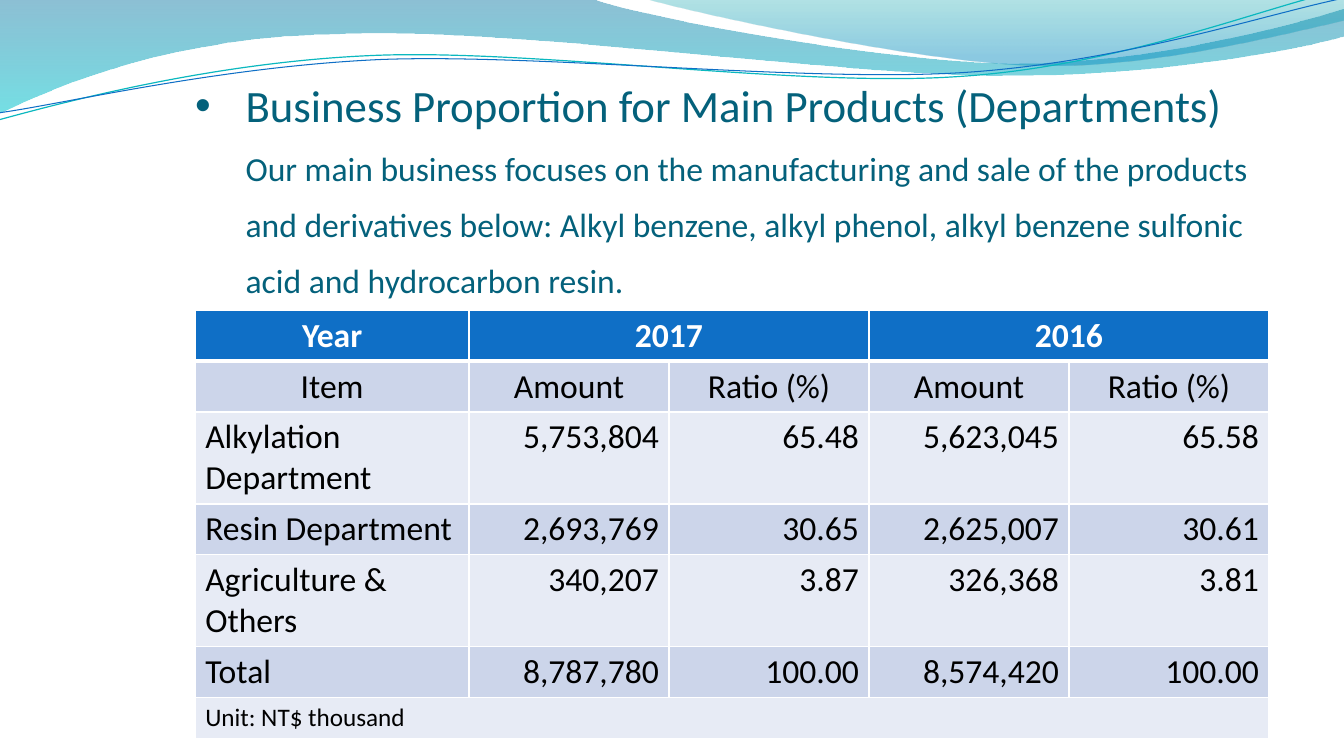
"""Build a slide with a wave header, a heading and a table of business proportions."""
import math

import pptx
import pptx.dml.color
import pptx.enum.text
import pptx.oxml
import pptx.oxml.ns
import pptx.util

Cm, Pt = pptx.util.Cm, pptx.util.Pt
PP_ALIGN = pptx.enum.text.PP_ALIGN
NS, qn = pptx.oxml.ns.nsdecls("a"), pptx.oxml.ns.qn

FONT = "Calibri"
HEADING = "Business Proportion for Main Products (Departments)"
BODY = ("Our main business focuses on the manufacturing and sale of the products and "
        "derivatives below: Alkyl benzene, alkyl phenol, alkyl benzene sulfonic acid "
        "and hydrocarbon resin.")
ROWS = [
    ("Year", "2017", "", "2016", ""),
    ("Item", "Amount", "Ratio (%)", "Amount", "Ratio (%)"),
    ("Alkylation Department", "5,753,804", "65.48", "5,623,045", "65.58"),
    ("Resin Department", "2,693,769", "30.65", "2,625,007", "30.61"),
    ("Agriculture & Others", "340,207", "3.87", "326,368", "3.81"),
    ("Total", "8,787,780", "100.00", "8,574,420", "100.00"),
    ("Unit: NT$ thousand", "", "", "", ""),
]
MERGES = [((0, 1), (0, 2)), ((0, 3), (0, 4)), ((6, 0), (6, 4))]
COL_WIDTHS = (6.9, 5.04, 5.04, 5.04, 5.04)
ROW_HEIGHTS = (1.28, 1.28, 2.32, 1.28, 2.32, 1.28, 1.03)
LEFT, WIDTH = 4.92, 27.06
HEADER_FILL, BAND_FILLS = "0F6FC6", ("E7EBF5", "CCD5EA")

# Each wave: start point, then lines (x, y) and cubic curves (x1, y1, x2, y2, x, y), in cm.
RIBBONS = [
    ([(0, 0), (14.91, -0.03), (16.1, 0.43, 22.48, 1.6, 25.68, 1.6),
      (28.91, 1.6, 32.46, 0.66, 33.86, 0.23), (33.91, 0.91),
      (33.3, 1.12, 29.46, 1.93, 25.25, 1.91), (21.06, 1.91, 12.93, 0.71, 8.71, 0.86),
      (4.37, 0.91, 1.55, 2.11, -0.03, 2.87), (0, 0)],
     [(0, "0074A1", 45), (100, "00C6CF", 55)]),
    ([(16.23, -0.03), (17.25, 0.28, 23.09, 1.57, 26.04, 1.65),
      (28.98, 1.75, 32.56, 0.81, 33.86, 0.53), (33.86, 0), (16.23, -0.03)],
     [(0, "00A1A9", 30), (80, "008BBF", 45)]),
]
STRAND_ANGLE = -2.7
STRANDS = [
    ([(-0.03, 3.02), (1.63, 2.57, 5.36, 1.57, 9.37, 1.4),
      (13.39, 1.22, 20.07, 2.21, 24.13, 1.93), (28.19, 1.68, 31.8, 0.2, 33.81, -0.25)],
     "0AB8BF", 0.85),
    ([(0, 2.84), (1.6, 2.62, 5.54, 1.68, 9.6, 1.5),
      (13.64, 1.35, 20.22, 2.08, 24.26, 1.83), (28.32, 1.57, 31.88, 0.36, 33.88, -0.05)],
     "0F6FC6", 0.75),
]


def rgb(value):
    return pptx.dml.color.RGBColor.from_string(value)


def style_font(font, size, color, bold=False):
    font.name, font.size, font.bold = FONT, Pt(size), bold
    font.color.rgb = rgb(color)


def rotate(x, y, degrees):
    cos, sin = math.cos(math.radians(degrees)), math.sin(math.radians(degrees))
    return x * cos - y * sin, x * sin + y * cos


def add_wave(slide, segments, close, angle=0):
    points = [rotate(Cm(x), Cm(y), -angle)
              for seg in segments for x, y in zip(seg[::2], seg[1::2])]
    fb = slide.shapes.build_freeform(*points[0])
    fb.add_line_segments(points[1:], close=close)
    sp = fb.convert_to_shape()
    lines = iter(list(sp.element.iter(qn("a:lnTo"))))
    for seg in segments[1:]:
        line = next(lines)
        if len(seg) == 6:
            curve = pptx.oxml.parse_xml(f"<a:cubicBezTo {NS}/>")
            line.addprevious(curve)
            for part in (line, next(lines), next(lines)):
                curve.append(part[0])
                part.getparent().remove(part)
    cx, cy = rotate(sp.left + sp.width / 2, sp.top + sp.height / 2, angle)
    sp.left, sp.top = round(cx - sp.width / 2), round(cy - sp.height / 2)
    sp.rotation = angle % 360
    sp.shadow.inherit = False
    sp.fill.background()
    return sp


def set_gradient(sp, stops):
    gs = "".join(f'<a:gs pos="{pos * 1000}"><a:srgbClr val="{color}">'
                 f'<a:alpha val="{alpha * 1000}"/></a:srgbClr></a:gs>'
                 for pos, color, alpha in stops)
    grad = pptx.oxml.parse_xml(f'<a:gradFill {NS} rotWithShape="1"><a:gsLst>{gs}</a:gsLst>'
                               '<a:lin ang="5400000" scaled="0"/></a:gradFill>')
    spPr = sp.element.spPr
    spPr.replace(spPr.find(qn("a:noFill")), grad)


def add_heading(slide):
    tf = slide.shapes.add_textbox(Cm(LEFT), Cm(0.43), Cm(WIDTH), Cm(8.48)).text_frame
    tf.word_wrap = True
    tf.vertical_anchor = pptx.enum.text.MSO_ANCHOR.MIDDLE
    tf.margin_left = tf.margin_right = tf.margin_bottom = 0
    tf.margin_top = Cm(0.13)
    p = tf.paragraphs[0]
    p.text = HEADING + "\v" + BODY
    p.line_spacing, p.space_before, p.space_after = Pt(40), Pt(24), Pt(18)
    for r, size in zip(p.runs, (32, 24)):
        style_font(r.font, size, "04617B")
    pPr = p._p.get_or_add_pPr()
    pPr.set("marL", str(Cm(1.27)))
    pPr.set("indent", str(Cm(-1.27)))
    pPr.append(pptx.oxml.parse_xml(f'<a:buFont {NS} typeface="Arial"/>'))
    pPr.append(pptx.oxml.parse_xml(f'<a:buChar {NS} char="•"/>'))


def set_borders(cell, header):
    tcPr = cell._tc.get_or_add_tcPr()
    for i, side in enumerate("LRTB"):
        width = Pt(3 if header and side == "B" else 1)
        tcPr.insert(i, pptx.oxml.parse_xml(
            f'<a:ln{side} {NS} w="{width}"><a:solidFill><a:srgbClr val="FFFFFF"/>'
            f'</a:solidFill></a:ln{side}>'))


def add_products_table(slide):
    tbl = slide.shapes.add_table(len(ROWS), len(COL_WIDTHS), Cm(LEFT), Cm(7.82),
                                 Cm(WIDTH), Cm(sum(ROW_HEIGHTS))).table
    tbl.first_row = tbl.horz_banding = False
    for col, width in zip(tbl.columns, COL_WIDTHS):
        col.width = Cm(width)
    for row, height in zip(tbl.rows, ROW_HEIGHTS):
        row.height = Cm(height)
    for i, row in enumerate(ROWS):
        header = i == 0
        for j, text in enumerate(row):
            cell = tbl.cell(i, j)
            cell.fill.solid()
            cell.fill.fore_color.rgb = rgb(HEADER_FILL if header else BAND_FILLS[i % 2])
            set_borders(cell, header)
            cell.text = text
            p = cell.text_frame.paragraphs[0]
            p.alignment = (PP_ALIGN.CENTER if i < 2 else
                           PP_ALIGN.RIGHT if j else PP_ALIGN.LEFT)
            size = 18 if i == len(ROWS) - 1 else 24
            for r in p.runs:
                style_font(r.font, size, "FFFFFF" if header else "000000", header)
    for first, last in MERGES:
        tbl.cell(*first).merge(tbl.cell(*last))


def main():
    prs = pptx.Presentation()
    prs.slide_width, prs.slide_height = Cm(33.87), Cm(19.05)
    slide = prs.slides.add_slide(prs.slide_layouts[6])
    for segments, stops in RIBBONS:
        sp = add_wave(slide, segments, True)
        set_gradient(sp, stops)
        sp.line.fill.background()
    for segments, color, width in STRANDS:
        sp = add_wave(slide, segments, False, STRAND_ANGLE)
        sp.line.color.rgb = rgb(color)
        sp.line.width = Pt(width)
    add_heading(slide)
    add_products_table(slide)
    prs.save("out.pptx")


if __name__ == "__main__":
    main()
